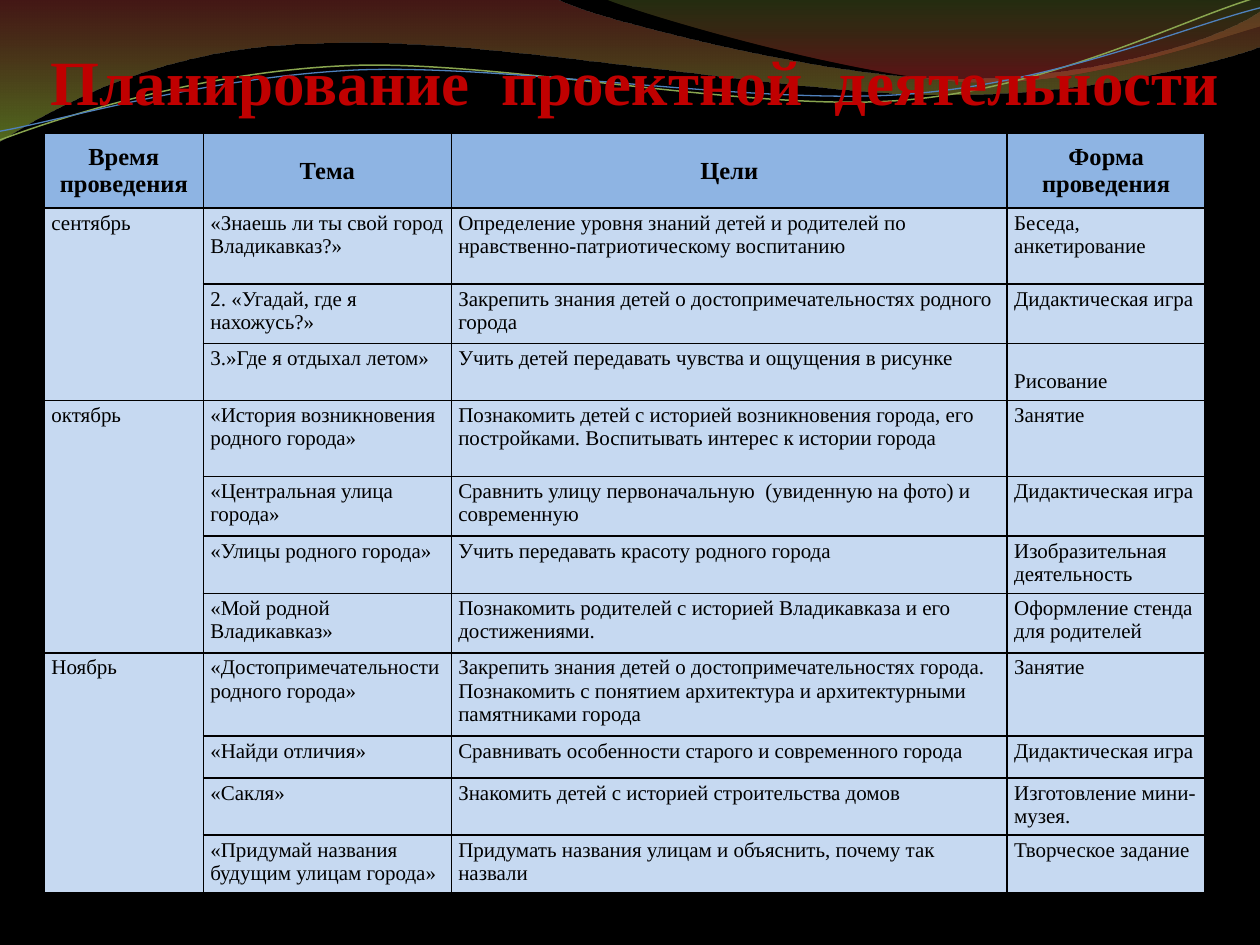
from dataclasses import dataclass
from math import cos, radians, sin
from typing import NamedTuple

from lxml import etree
from pptx import Presentation
from pptx.dml.color import RGBColor
from pptx.enum import text
from pptx.oxml import ns
from pptx.util import Pt

FONT = "Times New Roman"
HEX = {
    "back": "000000", "ink": "000000", "title": "C00000", "edge": "632523",
    "head": "8EB4E3", "body": "C6D9F1", "red": "973330", "lime": "95C238",
    "moss": "769537", "rust": "BE3330", "green": "89A54F", "blue": "4F81BD",
}


class Stop(NamedTuple):
    color: str
    place: float
    alpha: int


@dataclass
class Wave:
    """Steps hold two numbers for a straight line, six for a Bezier curve."""
    start: tuple
    steps: list
    stops: tuple = ()
    line: str = ""
    width: float = 0
    pivot: tuple = (0, 0)
    tilt: float = 0


class Task(NamedTuple):
    theme: str
    goal: str
    form: str
    low: bool = False


@dataclass
class Month:
    name: str
    tasks: list


WAVES = [
    Wave((0, -1), [
        (317, -1), (343, 12, 478, 45, 546, 45), (614, 45, 690, 27, 720, 6.5),
        (721, 26), (708, 32, 626, 55, 537, 54), (447, 54, 275, 20, 185, 24.5),
        (93, 25, 33, 60, -1, 81)],
        stops=(Stop("red", 0, 45), Stop("lime", 1, 55))),
    Wave((345, -1), [
        (366, 8, 491, 45, 554, 47), (616, 50, 692, 23, 720, 15), (720, 0)],
        stops=(Stop("moss", 0, 30), Stop("rust", 0.8, 45))),
    Wave((0, 80), [
        (34.5, 67, 114, 41, 199, 37.5), (284.5, 34, 427, 64, 513.5, 57.5),
        (600, 51, 675.5, 11, 718.5, -1.5)],
        line="green", width=0.85, pivot=(359.3, 41.4), tilt=-2.7),
    Wave((0, 75), [
        (34, 69, 118, 44, 204, 40), (290, 36.5, 430, 60, 516, 54),
        (602, 48, 677.5, 15, 720, 4.5)],
        line="blue", width=0.75, pivot=(359.6, 42.5), tilt=-2.7),
]

HEADS = ["Время проведения", "Тема", "Цели", "Форма проведения"]
COLS = [90.8, 141.7, 317.7, 113.1]
ROWS = [42.5, 43.5, 34, 32.5, 43.5, 34, 32.5, 34, 47.5, 24, 32.5, 32.5]
PLAN = [
    Month("сентябрь", [
        Task("«Знаешь ли ты свой город Владикавказ?»",
             "Определение уровня знаний детей и родителей по "
             "нравственно-патриотическому воспитанию",
             "Беседа, анкетирование"),
        Task("2. «Угадай, где я нахожусь?»",
             "Закрепить знания детей о достопримечательностях родного города",
             "Дидактическая игра"),
        Task("3.»Где я отдыхал летом»",
             "Учить детей передавать чувства и ощущения в рисунке",
             "Рисование", low=True),
    ]),
    Month("октябрь", [
        Task("«История возникновения родного города»",
             "Познакомить детей с историей возникновения города, его "
             "постройками. Воспитывать интерес к истории города",
             "Занятие"),
        Task("«Центральная улица города»",
             "Сравнить улицу первоначальную  (увиденную на фото) и современную",
             "Дидактическая игра"),
        Task("«Улицы родного города»",
             "Учить передавать красоту родного города",
             "Изобразительная деятельность"),
        Task("«Мой родной Владикавказ»",
             "Познакомить родителей с историей Владикавказа и его достижениями.",
             "Оформление стенда для родителей"),
    ]),
    Month("Ноябрь", [
        Task("«Достопримечательности родного города»",
             "Закрепить знания детей о достопримечательностях города. "
             "Познакомить с понятием архитектура и архитектурными "
             "памятниками города",
             "Занятие"),
        Task("«Найди отличия»",
             "Сравнивать особенности старого и современного города",
             "Дидактическая игра"),
        Task("«Сакля»",
             "Знакомить детей с историей строительства домов",
             "Изготовление мини-музея."),
        Task("«Придумай названия будущим улицам города»",
             "Придумать названия улицам и объяснить, почему так назвали",
             "Творческое задание"),
    ]),
]


def rgb(name: str) -> RGBColor:
    return RGBColor.from_string(HEX[name])


def stroke(tag: str, color: str, width: float):
    """Make a solid line element for a cell border or a text outline."""
    line = etree.Element(ns.qn(tag), w=str(Pt(width)))
    fill = etree.SubElement(line, ns.qn("a:solidFill"))
    etree.SubElement(fill, ns.qn("a:srgbClr"), val=HEX[color])
    return line


def place(wave: Wave, x: float, y: float) -> tuple:
    """Undo the tilt of a wave, which its shape applies again."""
    turn, (px, py) = radians(-wave.tilt), wave.pivot
    dx, dy = x - px, y - py
    return (Pt(px + dx * cos(turn) - dy * sin(turn)),
            Pt(py + dx * sin(turn) + dy * cos(turn)))


def bend(shape, steps: list) -> None:
    """Join each three line segments of a curved step into one Bezier."""
    lines = iter(list(shape._element.iter(ns.qn("a:lnTo"))))
    for step in steps:
        group = [next(lines) for _ in range(len(step) // 2)]
        if len(group) == 3:
            curve = etree.Element(ns.qn("a:cubicBezTo"))
            group[0].addprevious(curve)
            for line in group:
                curve.append(line[0])
                line.getparent().remove(line)


def draw_wave(slide, wave: Wave) -> None:
    pen = slide.shapes.build_freeform(*place(wave, *wave.start), scale=1.0)
    pen.add_line_segments(
        [place(wave, *step[i:i + 2]) for step in wave.steps
         for i in range(0, len(step), 2)], close=bool(wave.stops))
    shape = pen.convert_to_shape()
    bend(shape, wave.steps)
    shape.rotation = wave.tilt
    shape.shadow.inherit = False
    if not wave.stops:
        shape.fill.background()
        shape.line.color.rgb = rgb(wave.line)
        shape.line.width = Pt(wave.width)
        return
    shape.line.fill.background()
    shape.fill.gradient()
    shape.fill.gradient_angle = 270
    for mark, stop in zip(shape.fill.gradient_stops, wave.stops):
        mark.color.rgb = rgb(stop.color)
        mark.position = stop.place
    for tint, stop in zip(shape._element.iter(ns.qn("a:srgbClr")), wave.stops):
        etree.SubElement(tint, ns.qn("a:alpha"), val=str(stop.alpha * 1000))


def add_run(para, words: str, size: float, color: str, bold: bool):
    run = para.add_run()
    run.text = words
    run.font.name, run.font.size, run.font.bold = FONT, Pt(size), bold
    run.font.color.rgb = rgb(color)
    return run


def set_title(slide) -> None:
    title = slide.shapes.title
    title.left, title.top, title.width, title.height = map(Pt, (18.3, 20.6, 689, 51))
    frame = title.text_frame
    frame.word_wrap = False
    frame.auto_size = text.MSO_AUTO_SIZE.SHAPE_TO_FIT_TEXT
    frame.vertical_anchor = text.MSO_ANCHOR.MIDDLE
    para = frame.paragraphs[0]
    para.alignment = text.PP_ALIGN.CENTER
    run = add_run(para, "Планирование  проектной  деятельности", 36, "title", True)
    run.font._element.insert(0, stroke("a:ln", "edge", 1))
    slide.shapes._spTree.append(title._element)  # bring in front of the waves


def fill_cell(cell, words: str, head: bool = False, low: bool = False) -> None:
    para = cell.text_frame.paragraphs[0]
    add_run(para, words, 14 if head else 12, "ink", head)
    if head:
        para.alignment = text.PP_ALIGN.CENTER
        cell.vertical_anchor = text.MSO_ANCHOR.MIDDLE
    elif low:
        cell.vertical_anchor = text.MSO_ANCHOR.BOTTOM
        cell.margin_bottom = Pt(4.2)


def draw_plan(slide) -> None:
    table = slide.shapes.add_table(len(ROWS), len(COLS), Pt(25.4), Pt(76.3),
                                   Pt(sum(COLS)), Pt(sum(ROWS))).table
    table.first_row = table.horz_banding = False
    for col, width in zip(table.columns, COLS):
        col.width = Pt(width)
    for i, (row, height) in enumerate(zip(table.rows, ROWS)):
        row.height = Pt(height)
        for cell in row.cells:
            cell.margin_left = cell.margin_right = Pt(4)
            cell.margin_top = cell.margin_bottom = Pt(2)
            cell.fill.solid()
            cell.fill.fore_color.rgb = rgb("body" if i else "head")
            for k, side in enumerate("LRTB"):
                cell._tc.tcPr.insert(k, stroke(f"a:ln{side}", "ink", 1))
    for j, words in enumerate(HEADS):
        fill_cell(table.cell(0, j), words, head=True)
    top = 1
    for month in PLAN:
        last = top + len(month.tasks) - 1
        table.cell(top, 0).merge(table.cell(last, 0))
        fill_cell(table.cell(top, 0), month.name)
        for i, task in enumerate(month.tasks, top):
            fill_cell(table.cell(i, 1), task.theme)
            fill_cell(table.cell(i, 2), task.goal)
            fill_cell(table.cell(i, 3), task.form, low=task.low)
        top = last + 1


def main() -> None:
    deck = Presentation()
    deck.slide_width, deck.slide_height = Pt(720), Pt(540)
    slide = deck.slides.add_slide(deck.slide_layouts[5])
    slide.background.fill.solid()
    slide.background.fill.fore_color.rgb = rgb("back")
    for wave in WAVES:
        draw_wave(slide, wave)
    set_title(slide)
    draw_plan(slide)
    deck.save("out.pptx")


if __name__ == "__main__":
    main()
